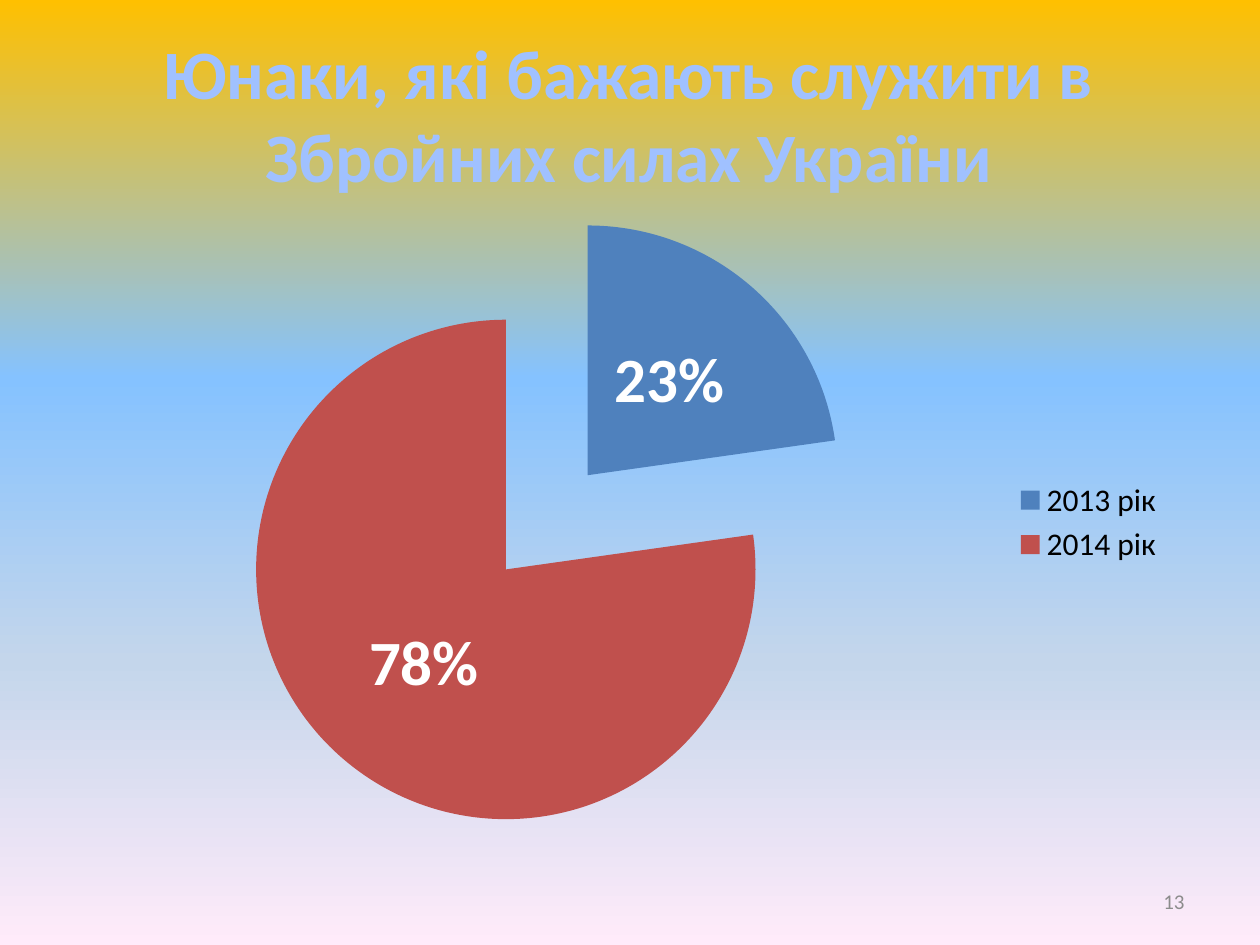
from lxml.etree import SubElement
from pptx import Presentation
from pptx.chart.data import CategoryChartData
from pptx.dml.color import RGBColor
from pptx.enum.chart import XL_CHART_TYPE as CT, XL_LABEL_POSITION as LP, XL_LEGEND_POSITION as LegPos
from pptx.enum.text import MSO_ANCHOR as Anchor, MSO_AUTO_SIZE as AutoSize, PP_ALIGN as Align
from pptx.oxml import parse_xml
from pptx.oxml.ns import nsdecls, qn
from pptx.util import Pt

COLORS = {
    "blue": "4F81BD", "red": "C0504D", "outline": "467AB8",
    "grey": "8C8C8C", "white": "FFFFFF", "black": "000000",
}
SKY = [(0, "FFC000"), (40, "85C2FF"), (70, "C4D6EB"), (100, "FFEBFA")]
SHINE = [(0, "BFD3F9"), (9, "A0C1FF"), (50, "003D85"), (79, "A0C1FF"), (100, "BFD3F9")]


def color(name):
    """Return the named palette colour."""
    return RGBColor.from_string(COLORS[name])


def set_font(font, fill=None, **values):
    """Apply format values and an optional solid colour to a font."""
    for key, value in {"name": "Calibri", **values}.items():
        setattr(font, key, value)
    if fill:
        font.color.rgb = color(fill)


def set_gradient(fill, parent, stops):
    """Give a fill inside parent a top-to-bottom gradient."""
    fill.gradient()
    fill.gradient_angle = 270
    gs_lst = next(parent.iter(qn("a:gsLst")))
    gs_lst.clear()
    for pos, hex_value in stops:
        gs = SubElement(gs_lst, qn("a:gs"), pos=str(pos * 1000))
        SubElement(gs, qn("a:srgbClr"), val=hex_value)


def place(shape, left, top, width, height):
    """Set a shape's position and size in points."""
    for key, value in dict(left=left, top=top, width=width, height=height).items():
        setattr(shape, key, Pt(value))


def add_title(s, text):
    """Fill the title placeholder with outlined gradient text."""
    sp = s.shapes.title
    place(sp, 35.3, 41.8, 648, 46)
    tf = sp.text_frame
    for key, value in dict(word_wrap=True, auto_size=AutoSize.NONE,
                           vertical_anchor=Anchor.MIDDLE).items():
        setattr(tf, key, value)
    p = tf.paragraphs[0]
    p.alignment = Align.CENTER
    r = p.add_run()
    r.text = text
    set_font(r.font, size=Pt(39.6), bold=True)
    set_gradient(r.font.fill, r._r, SHINE)
    ln = parse_xml(
        f'<a:ln {nsdecls("a")} w="{Pt(0.83)}"><a:solidFill>'
        f'<a:srgbClr val="{COLORS["outline"]}"/></a:solidFill></a:ln>')
    r._r.get_or_add_rPr().insert(0, ln)


def add_number(s, text):
    """Add the slide number at the lower right."""
    tf = s.shapes.add_textbox(Pt(516), Pt(500.5), Pt(168), Pt(28.8)).text_frame
    tf.word_wrap = True
    tf.vertical_anchor = Anchor.MIDDLE
    p = tf.paragraphs[0]
    p.alignment = Align.RIGHT
    r = p.add_run()
    r.text = text
    set_font(r.font, "grey", size=Pt(12))


def add_pie(s, slices):
    """Add the exploded pie from (category, value, colour) rows."""
    data = CategoryChartData(number_format="0%")
    data.categories = [name for name, _, _ in slices]
    data.add_series("Series 1", [value for _, value, _ in slices])
    chart = s.shapes.add_chart(
        CT.PIE, Pt(47.5), Pt(110.2), Pt(625), Pt(376.6), data).chart
    set_font(chart.font, "black", size=Pt(18))
    chart.has_title = False
    chart.has_legend = True
    chart.legend.position = LegPos.RIGHT
    chart.legend.include_in_layout = False
    plot = chart.plots[0]
    plot.vary_by_categories = True
    series = plot.series[0]
    for i, (_, _, name) in enumerate(slices):
        fill = series.points[i].format.fill
        fill.solid()
        fill.fore_color.rgb = color(name)
    explosion = parse_xml(f'<c:explosion {nsdecls("c")} val="25"/>')
    series._element.find(qn("c:dPt")).addprevious(explosion)
    labels = series.data_labels
    for key, value in dict(show_value=True, position=LP.CENTER, number_format="0%",
                           number_format_is_linked=False).items():
        setattr(labels, key, value)
    set_font(labels.font, "white", size=Pt(36), bold=True)


def main():
    """Build and save the slide."""
    prs = Presentation()
    prs.slide_width, prs.slide_height = Pt(720), Pt(540)
    s = prs.slides.add_slide(prs.slide_layouts[5])
    set_gradient(s.background.fill, s._element, SKY)
    add_title(s, "Юнаки, які бажають служити в Збройних силах України")
    add_number(s, "13")
    add_pie(s, [("2013 рік", 0.23, "blue"), ("2014 рік", 0.78, "red")])
    prs.save("out.pptx")


if __name__ == "__main__":
    main()
